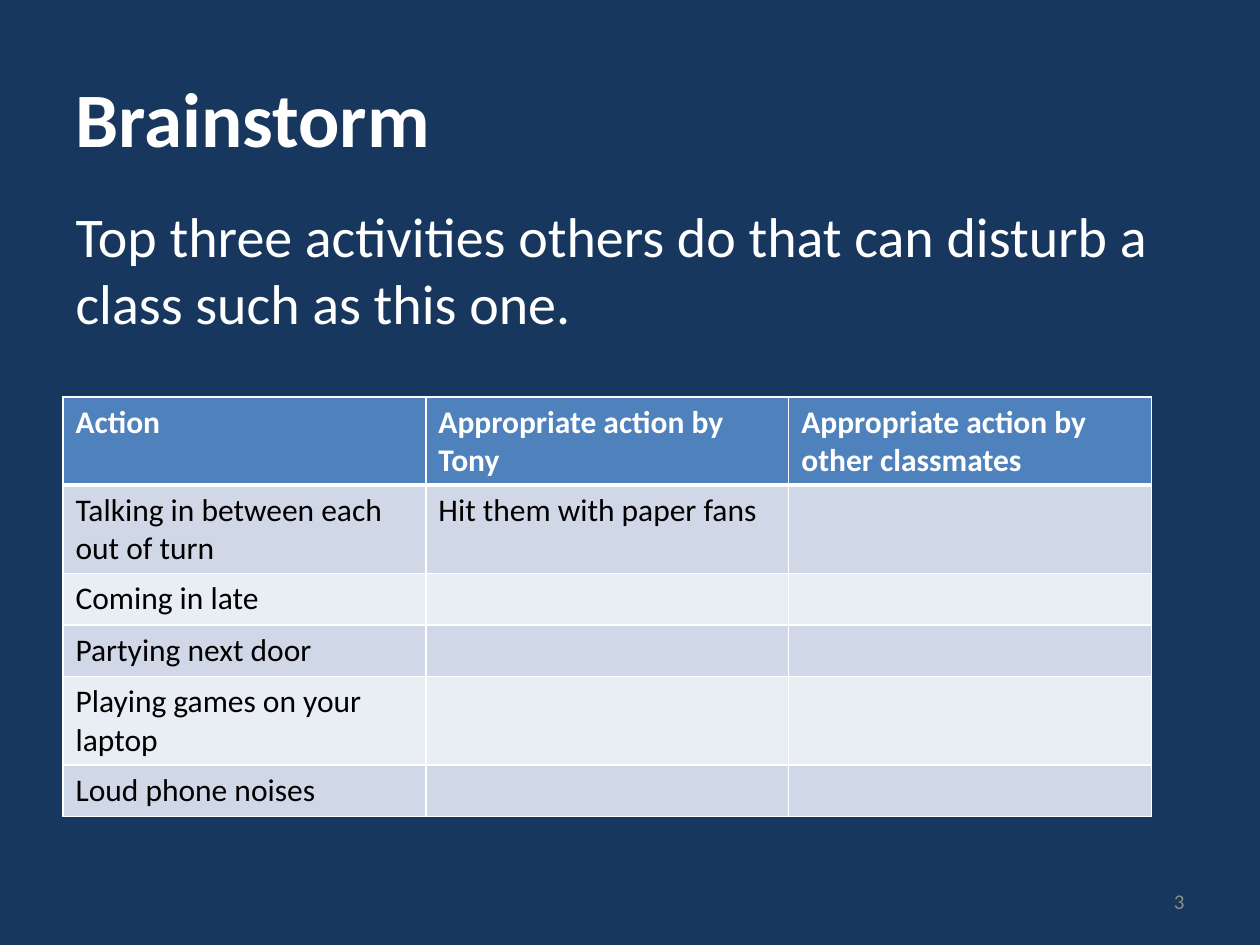
from dataclasses import dataclass

from lxml import etree
from pptx import Presentation
from pptx.dml.color import RGBColor
from pptx.enum.text import MSO_ANCHOR, PP_ALIGN
from pptx.oxml.ns import qn
from pptx.util import Inches, Pt

LEFT, RIGHT = PP_ALIGN.LEFT, PP_ALIGN.RIGHT
TOP, MIDDLE = MSO_ANCHOR.TOP, MSO_ANCHOR.MIDDLE

NAVY = RGBColor(0x17, 0x37, 0x5E)
WHITE = RGBColor(0xFF, 0xFF, 0xFF)
BLACK = RGBColor(0x00, 0x00, 0x00)
GRAY = RGBColor(0x8C, 0x8C, 0x8C)
BLUE = RGBColor(0x4F, 0x81, 0xBD)
BAND_DARK = RGBColor(0xD0, 0xD8, 0xE8)
BAND_LIGHT = RGBColor(0xE9, 0xED, 0xF4)

FONT = "Calibri"
SLIDE_WIDTH, SLIDE_HEIGHT = Inches(10), Inches(7.5)
MARGIN = Inches(0.5)
CONTENT_WIDTH = SLIDE_WIDTH - 2 * MARGIN
TABLE_TOP = Inches(3.15)
COLUMN_WIDTH, ROW_HEIGHT = Inches(2.88), Inches(0.41)
THIN, THICK = Pt(1), Pt(3)

ROWS = [
    ("Action", "Appropriate action by Tony", "Appropriate action by other classmates"),
    ("Talking in between each out of turn", "Hit them with paper fans", ""),
    ("Coming in late", "", ""),
    ("Partying next door", "", ""),
    ("Playing games on your laptop", "", ""),
    ("Loud phone noises", "", ""),
]


@dataclass(frozen=True)
class TextStyle:
    size: int
    color: RGBColor
    bold: bool = False
    align: PP_ALIGN = LEFT


@dataclass(frozen=True)
class RowStyle:
    text: TextStyle
    fill: RGBColor
    top: int = THIN
    bottom: int = THIN


def write(frame, text: str, style: TextStyle):
    para = frame.paragraphs[0]
    para.alignment = style.align
    span = para.add_run()
    span.text = text
    span.font.name = FONT
    span.font.size = Pt(style.size)
    span.font.bold = style.bold
    span.font.color.rgb = style.color
    return para


def place(box, left: int, top: int, width: int, height: int) -> None:
    box.left, box.top, box.width, box.height = left, top, width, height


def remove_bullet(para) -> None:
    properties = para._p.get_or_add_pPr()
    properties.set("marL", "0")
    properties.set("indent", "0")
    etree.SubElement(properties, qn("a:buNone"))


def draw_borders(cell, style: RowStyle) -> None:
    properties = cell._tc.get_or_add_tcPr()
    widths = {"L": THIN, "R": THIN, "T": style.top, "B": style.bottom}
    for side, width in widths.items():
        line = etree.SubElement(properties, qn(f"a:ln{side}"), w=str(width))
        fill = etree.SubElement(line, qn("a:solidFill"))
        etree.SubElement(fill, qn("a:srgbClr"), val=str(WHITE))


def row_style(row: int) -> RowStyle:
    if row == 0:
        return RowStyle(TextStyle(18, WHITE, bold=True), BLUE, bottom=THICK)
    return RowStyle(
        TextStyle(18, BLACK),
        BAND_DARK if row % 2 else BAND_LIGHT,
        top=THICK if row == 1 else THIN,
    )


def add_action_table(slide) -> None:
    columns = len(ROWS[0])
    table = slide.shapes.add_table(
        len(ROWS), columns, MARGIN, TABLE_TOP,
        columns * COLUMN_WIDTH, len(ROWS) * ROW_HEIGHT,
    ).table
    for column in table.columns:
        column.width = COLUMN_WIDTH
    for row, texts in enumerate(ROWS):
        table.rows[row].height = ROW_HEIGHT
        style = row_style(row)
        for column, text in enumerate(texts):
            cell = table.cell(row, column)
            draw_borders(cell, style)
            cell.fill.solid()
            cell.fill.fore_color.rgb = style.fill
            if text:
                write(cell.text_frame, text, style.text)


def add_slide_number(slide) -> None:
    width = Inches(2.33)
    box = slide.shapes.add_textbox(
        SLIDE_WIDTH - MARGIN - width, Inches(6.95), width, Inches(0.4)
    )
    box.text_frame.word_wrap = True
    box.text_frame.vertical_anchor = MIDDLE
    write(box.text_frame, "3", TextStyle(12, GRAY, align=RIGHT))


def main() -> None:
    deck = Presentation()
    deck.slide_width, deck.slide_height = SLIDE_WIDTH, SLIDE_HEIGHT
    slide = deck.slides.add_slide(deck.slide_layouts.get_by_name("Title and Content"))
    slide.background.fill.solid()
    slide.background.fill.fore_color.rgb = NAVY

    title = slide.shapes.title
    place(title, MARGIN, Inches(0.3), CONTENT_WIDTH, Inches(1.25))
    title.text_frame.vertical_anchor = MIDDLE
    write(title.text_frame, "Brainstorm", TextStyle(44, WHITE, bold=True))

    body = slide.placeholders[1]
    place(body, MARGIN, Inches(1.55), CONTENT_WIDTH, Inches(4.95))
    body.text_frame.vertical_anchor = TOP
    remove_bullet(write(
        body.text_frame,
        "Top three activities others do that can disturb a class such as this one.",
        TextStyle(32, WHITE),
    ))

    add_slide_number(slide)
    add_action_table(slide)
    deck.save("out.pptx")


if __name__ == "__main__":
    main()
